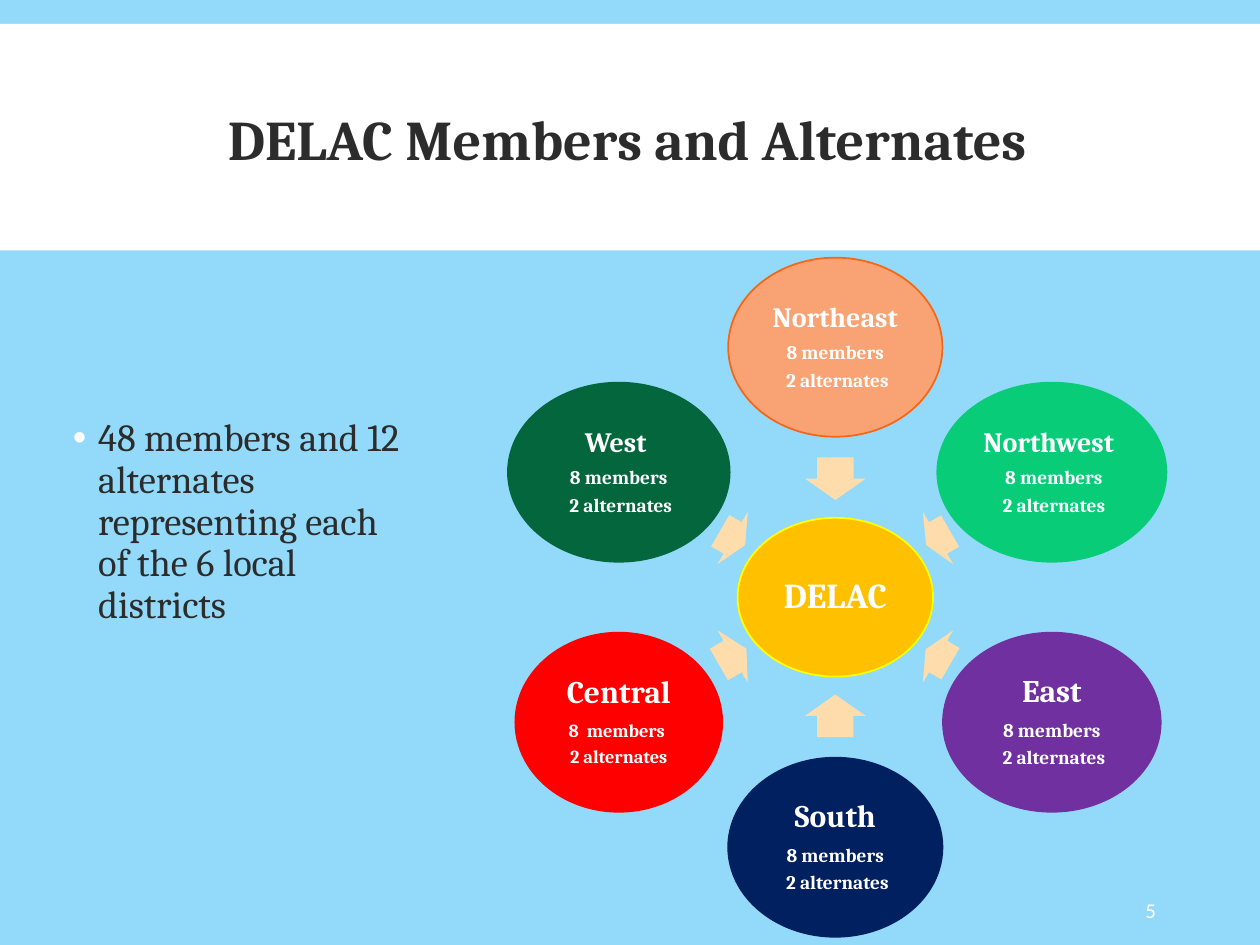
"""Build the slide on DELAC members and alternates."""
from math import cos, radians, sin

from lxml import etree
from pptx import Presentation
from pptx.dml.color import RGBColor
from pptx.enum.dml import MSO_FILL
from pptx.enum.shapes import MSO_SHAPE
from pptx.enum.text import MSO_ANCHOR, MSO_AUTO_SIZE, PP_ALIGN
from pptx.oxml.ns import qn
from pptx.util import Cm, Pt

RECTANGLE, OVAL, ARROW = MSO_SHAPE.RECTANGLE, MSO_SHAPE.OVAL, MSO_SHAPE.RIGHT_ARROW
MIDDLE, TOP = MSO_ANCHOR.MIDDLE, MSO_ANCHOR.TOP
LEFT, CENTER = PP_ALIGN.LEFT, PP_ALIGN.CENTER
NO_FIT = MSO_AUTO_SIZE.NONE

SKY, WHITE, INK, PEACH = "93DAFA", "FFFFFF", "2C2C2C", "FFDCAB"
HUB_X, HUB_Y = 16.84, 12.04
DISTRICT_RADIUS, ARROW_RADIUS = 5.04, 2.39
DISTRICT_HEIGHT, ARROW_THICKNESS = 3.61, 1.22
COUNTS = ("8 members", " 2 alternates")

# name, fill, outline, width, heading size, count size, counts, arrow length
DISTRICTS = [
    ("Northeast", "F9A374", "F56617", 4.32, 16, 11, COUNTS, 0.86),
    ("Northwest ", "08CC78", "08CC78", 4.62, 16, 11, (" 8 members", " 2 alternates"), 0.56),
    ("East", "7030A0", "7030A0", 4.39, 18, 11, COUNTS, 0.58),
    ("South", "002060", "002060", 4.32, 18, 11, COUNTS, 0.86),
    ("Central", "FF0000", "FF0000", 4.17, 18, 10.5, ("8  members ", "2 alternates"), 0.64),
    ("West ", "04663C", "04663C", 4.47, 16, 11, COUNTS, 0.58),
]


def paint(color_format, color):
    """Set a fill or font colour from a hex string."""
    color_format.rgb = RGBColor.from_string(color)


def add_panel(slide, preset, box, fill, outline=None):
    """Add a filled preset shape without shadow."""
    panel = slide.shapes.add_shape(preset, *map(Cm, box))
    panel.shadow.inherit = False
    panel.fill.solid()
    paint(panel.fill.fore_color, fill)
    if outline:
        paint(panel.line.color, outline)
        panel.line.width = Pt(1)
    else:
        panel.line.fill.background()
    return panel


def set_frame(frame, anchor=MIDDLE, margins=(0.25, 0.13, 0.25, 0.13)):
    """Set wrapping, anchor and margins of a text frame."""
    frame.word_wrap = True
    frame.auto_size = NO_FIT
    frame.vertical_anchor = anchor
    (frame.margin_left, frame.margin_top,
     frame.margin_right, frame.margin_bottom) = map(Cm, margins)


def write(paragraph, text, size, color=WHITE, font="Cambria", bold=False,
          align=CENTER, spacing=0.9, before=0, after=0):
    """Write one formatted run into a paragraph."""
    paragraph.alignment = align
    paragraph.line_spacing = spacing
    paragraph.space_before, paragraph.space_after = Pt(before), Pt(after)
    run = paragraph.add_run()
    run.text = text
    run.font.name, run.font.size, run.font.bold = font, Pt(size), bold
    paint(run.font.color, color)


def space_by_percent(paragraph, percent):
    """Make the space after a paragraph relative to its text size."""
    after = paragraph._p.pPr.find(qn("a:spcAft"))
    after.clear()
    etree.SubElement(after, qn("a:spcPct"), val=str(percent * 1000))


def add_bullet(paragraph, color, indent):
    """Give a paragraph a coloured bullet with a hanging indent."""
    properties = paragraph._p.get_or_add_pPr()
    properties.set("marL", str(Cm(indent)))
    properties.set("indent", str(-Cm(indent)))
    bullet_color = etree.SubElement(properties, qn("a:buClr"))
    etree.SubElement(bullet_color, qn("a:srgbClr"), val=color)
    etree.SubElement(properties, qn("a:buChar"), char="•")


def add_circle(slide, center, size, fill, outline, lines):
    """Add an oval around a centre with bold lines of (text, size)."""
    (x, y), (width, height) = center, size
    box = (x - width / 2, y - height / 2, width, height)
    frame = add_panel(slide, OVAL, box, fill, outline).text_frame
    set_frame(frame, margins=(0.06,) * 4)
    for index, (text, points) in enumerate(lines):
        paragraph = frame.add_paragraph() if index else frame.paragraphs[0]
        write(paragraph, text, points, bold=True)
        space_by_percent(paragraph, 35)


def around_hub(angle, radius):
    """Return the point at a clockwise angle from the top of the hub."""
    turn = radians(angle)
    return HUB_X + radius * sin(turn), HUB_Y - radius * cos(turn)


def add_inward_arrow(slide, angle, length):
    """Add an arrow that points from a district to the hub."""
    x, y = around_hub(angle, ARROW_RADIUS)
    box = (x - length / 2, y - ARROW_THICKNESS / 2, length, ARROW_THICKNESS)
    arrow = add_panel(slide, ARROW, box, PEACH)
    arrow.adjustments[0], arrow.adjustments[1] = 0.6, 0.5
    arrow.rotation = (angle + 90) % 360


def place(holder, box):
    """Move and size a placeholder."""
    holder.left, holder.top, holder.width, holder.height = map(Cm, box)


def add_heading(slide):
    """Add the white band and the title upon it."""
    band = add_panel(slide, RECTANGLE, (0, 0.48, 25.4, 4.57), WHITE)
    slide.shapes._spTree.insert(2, band._element)
    title = slide.shapes.title
    place(title, (0.28, 0.79, 24.74, 4.19))
    set_frame(title.text_frame)
    write(title.text_frame.paragraphs[0], "DELAC Members and Alternates", 32,
          color=INK, bold=True, spacing=0.85)


def add_summary(slide):
    """Fill the body placeholder with the bulleted total."""
    summary = slide.placeholders[1]
    place(summary, (1.22, 8.31, 7.42, 11.81))
    set_frame(summary.text_frame, anchor=TOP)
    total = summary.text_frame.paragraphs[0]
    write(total, "48 members and 12 alternates representing each of the 6 local districts",
          22, color=INK, align=LEFT, before=12, after=2)
    add_bullet(total, WHITE, 0.51)


def add_districts(slide):
    """Add the hub, its districts and the arrows between them."""
    add_circle(slide, (HUB_X, HUB_Y), (3.94, 3.2), "FFC000", "FFFF00", [("DELAC", 20)])
    step = 360 / len(DISTRICTS)
    for index, district in enumerate(DISTRICTS):
        name, fill, outline, width, name_size, count_size, counts, length = district
        angle = index * step
        add_inward_arrow(slide, angle, length)
        lines = [(name, name_size)] + [(count, count_size) for count in counts]
        add_circle(slide, around_hub(angle, DISTRICT_RADIUS),
                   (width, DISTRICT_HEIGHT), fill, outline, lines)


def add_page_number(slide):
    """Add the page number at the lower right."""
    number = slide.shapes.add_textbox(*map(Cm, (22.96, 17.83, 1.98, 1.02))).text_frame
    set_frame(number, margins=(0.13, 0.13, 0.25, 0.13))
    write(number.paragraphs[0], "5", 12, font="Calibri", align=LEFT, spacing=1.0)


def main():
    """Build and save the slide."""
    deck = Presentation()
    deck.slide_width, deck.slide_height = Cm(25.4), Cm(19.05)
    slide = deck.slides.add_slide(deck.slide_layouts[1])
    slide.background.fill.solid()
    paint(slide.background.fill.fore_color, SKY)
    add_heading(slide)
    add_summary(slide)
    add_districts(slide)
    add_page_number(slide)
    deck.save("out.pptx")


if __name__ == "__main__":
    main()
